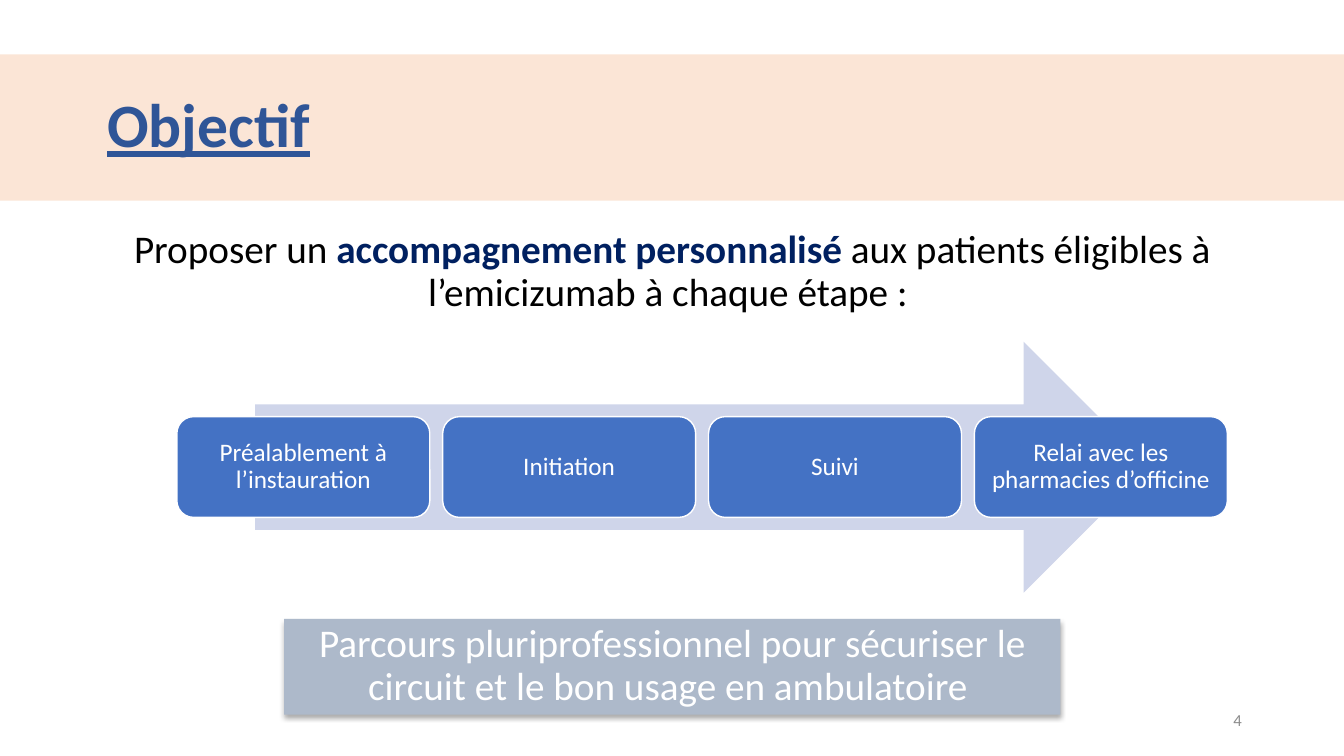
"""Build the slide stating the objective of personalised patient support."""
from dataclasses import dataclass
from typing import Optional

from lxml.etree import SubElement
from pptx import Presentation
from pptx.dml.color import RGBColor
from pptx.enum.shapes import MSO_SHAPE as Preset
from pptx.enum.text import MSO_ANCHOR as Anchor, PP_ALIGN as Align
from pptx.oxml.ns import qn
from pptx.util import Pt

COLORS = {
    "band": "FBE5D6",
    "title": "2F5597",
    "text": "000000",
    "emphasis": "002060",
    "banner": "ADB9CA",
    "arrow": "CFD5EA",
    "step": "4472C4",
    "white": "FFFFFF",
    "number": "8C8C8C",
}
STEPS = (
    "Préalablement à l’instauration",
    "Initiation",
    "Suivi",
    "Relai avec les pharmacies d’officine",
)
STEP_LEFT, STEP_TOP, STEP_WIDTH, STEP_HEIGHT = 126.3, 297.6, 180.7, 72
STEP_PITCH = 189.9


@dataclass(frozen=True)
class Run:
    text: str
    color: Optional[str] = None
    bold: Optional[bool] = None


@dataclass(frozen=True)
class Block:
    left: float
    top: float
    width: float
    height: float
    runs: tuple[Run, ...] = ()
    size: float = 28
    color: Optional[str] = None
    bold: Optional[bool] = None
    underline: Optional[bool] = None
    align: Align = Align.CENTER
    anchor: Anchor = Anchor.TOP
    margins: tuple[float, float, float, float] = (7.2, 3.6, 7.2, 3.6)
    preset: Optional[Preset] = None
    fill: Optional[str] = None
    line: Optional[str] = None
    shadow: bool = False


def rgb(name: str) -> RGBColor:
    return RGBColor.from_string(COLORS[name])


def add_soft_shadow(shape) -> None:
    effects = shape._element.spPr.find(qn("a:effectLst"))
    outer = SubElement(effects, qn("a:outerShdw"), blurRad=str(Pt(3.5)),
                       dist=str(Pt(2.2)), dir="5400000", rotWithShape="0")
    shade = SubElement(outer, qn("a:srgbClr"), val=COLORS["text"])
    SubElement(shade, qn("a:alpha"), val="32000")


def write_text(shape, block: Block) -> None:
    frame = shape.text_frame
    frame.word_wrap = True
    frame.vertical_anchor = block.anchor
    (frame.margin_left, frame.margin_top,
     frame.margin_right, frame.margin_bottom) = map(Pt, block.margins)
    paragraph = frame.paragraphs[0]
    paragraph.alignment = block.align
    paragraph.line_spacing = 0.9
    font = paragraph.font
    font.name, font.size = "Calibri", Pt(block.size)
    font.bold, font.underline = block.bold, block.underline
    if block.color:
        font.color.rgb = rgb(block.color)
    for part in block.runs:
        run = paragraph.add_run()
        run.text = part.text
        if part.bold is not None:
            run.font.bold = part.bold
        if part.color:
            run.font.color.rgb = rgb(part.color)


def draw(shapes, block: Block) -> None:
    place = [Pt(v) for v in (block.left, block.top, block.width, block.height)]
    if block.preset is None:
        shape = shapes.add_textbox(*place)
    else:
        shape = shapes.add_shape(block.preset, *place)
        shape.shadow.inherit = False
        shape.fill.solid()
        shape.fill.fore_color.rgb = rgb(block.fill)
        if block.line:
            shape.line.color.rgb = rgb(block.line)
            shape.line.width = Pt(1)
        else:
            shape.line.fill.background()
    if block.shadow:
        add_soft_shadow(shape)
    if block.runs:
        write_text(shape, block)


def step_block(index: int, label: str) -> Block:
    return Block(STEP_LEFT + index * STEP_PITCH, STEP_TOP, STEP_WIDTH, STEP_HEIGHT,
                 (Run(label),), size=18, color="white", anchor=Anchor.MIDDLE,
                 margins=(8.6, 8.6, 8.6, 8.6), preset=Preset.ROUNDED_RECTANGLE,
                 fill="step", line="white")


def main() -> None:
    deck = Presentation()
    deck.slide_width, deck.slide_height = Pt(960), Pt(540)
    shapes = deck.slides.add_slide(deck.slide_layouts[6]).shapes

    intro = Block(66.2, 160.6, 828, 83.5, (
        Run("Proposer un ", "text"),
        Run("accompagnement personnalisé ", "emphasis", True),
        Run("aux patients éligibles à l’emicizumab à chaque étape : ", "text"),
    ))
    title = Block(0, 38.9, 960, 104.4, (Run("Objectif"),), size=44, color="title",
                  bold=True, underline=True, align=Align.LEFT, anchor=Anchor.MIDDLE,
                  margins=(76.5, 3.6, 7.2, 3.6), preset=Preset.RECTANGLE, fill="band")
    banner = Block(203, 442.1, 554.4, 68.4, (
        Run("Parcours pluriprofessionnel pour sécuriser le circuit "
            "et le bon usage en ambulatoire "),
    ), color="white", preset=Preset.RECTANGLE, fill="banner", shadow=True)
    arrow = Block(182.2, 244.1, 638.6, 179.3, preset=Preset.RIGHT_ARROW, fill="arrow")
    steps = [step_block(index, label) for index, label in enumerate(STEPS)]
    number = Block(678.2, 500.4, 216, 28.8, (Run("4"),), size=12, color="number",
                   align=Align.RIGHT, anchor=Anchor.MIDDLE)

    for block in (intro, title, banner, arrow, *steps, number):
        draw(shapes, block)
    deck.save("out.pptx")


if __name__ == "__main__":
    main()
